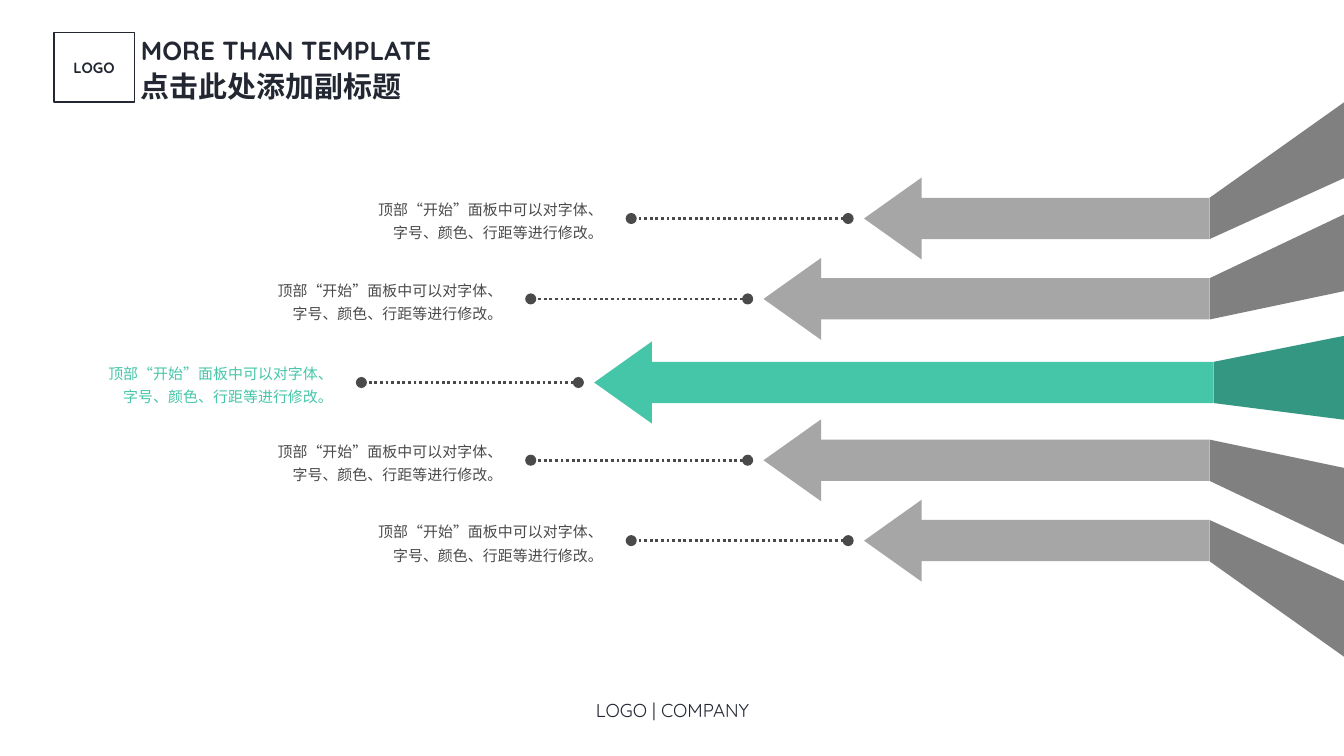
from dataclasses import dataclass

from lxml import etree
from pptx import Presentation
from pptx.dml.color import RGBColor
from pptx.enum.dml import MSO_LINE
from pptx.enum.shapes import MSO_CONNECTOR, MSO_SHAPE
from pptx.enum.text import MSO_ANCHOR, MSO_AUTO_SIZE, PP_ALIGN
from pptx.oxml.ns import qn
from pptx.shapes.autoshape import Shape
from pptx.shapes.shapetree import GroupShapes
from pptx.slide import Slide
from pptx.text.text import TextFrame
from pptx.util import Cm, Pt

RECTANGLE, TRIANGLE = MSO_SHAPE.RECTANGLE, MSO_SHAPE.ISOSCELES_TRIANGLE
LEFT, CENTER, RIGHT = PP_ALIGN.LEFT, PP_ALIGN.CENTER, PP_ALIGN.RIGHT
TOP, MIDDLE = MSO_ANCHOR.TOP, MSO_ANCHOR.MIDDLE
NO_FIT, GROW = MSO_AUTO_SIZE.NONE, MSO_AUTO_SIZE.SHAPE_TO_FIT_TEXT
DOTS, STRAIGHT = MSO_LINE.ROUND_DOT, MSO_CONNECTOR.STRAIGHT


@dataclass(frozen=True)
class Theme:
    ink: str = "222732"
    text: str = "4A4A4A"
    gray: str = "A6A6A6"
    dark_gray: str = "808080"
    green: str = "46C6A9"
    dark_green: str = "349782"
    latin: str = "Quicksand"
    chinese: str = "Noto Sans CJK SC"
    title_size: float = 14
    subtitle_size: float = 15.5
    footer_size: float = 10
    small_size: float = 8


@dataclass(frozen=True)
class Arrow:
    """One arrow; lengths in centimetres, tail_* being its far right edge."""
    axis: float
    tip: float
    shaft_left: float
    bend: float
    tail_x: float
    tail_top: float
    tail_bottom: float
    fill: str
    tail_fill: str
    text_color: str

    def mirrored(self) -> "Arrow":
        return Arrow(MIRROR_SUM - self.axis, self.tip, self.shaft_left, self.bend,
                     self.tail_x, MIRROR_SUM - self.tail_bottom,
                     MIRROR_SUM - self.tail_top, self.fill, self.tail_fill,
                     self.text_color)


THEME = Theme()
MIRROR_SUM = 14.35  # the outer arrows mirror each other about half this height
SHAFT_HEIGHT = 0.78
HEAD_LENGTH, HEAD_WIDTH = 1.09, 1.55
LINE_GAP, LINE_LENGTH = 0.3, 4.1
CAPTION_GAP, CAPTION_WIDTH, CAPTION_HEIGHT = 0.28, 4.98, 1.12
CAPTION = "顶部“开始”面板中可以对字体、字号、颜色、行距等进行修改。"

GRAYS = (THEME.gray, THEME.dark_gray, THEME.text)
OUTER = Arrow(4.13, 16.33, 17.12, 22.86, 25.55, 1.83, 3.3, *GRAYS)
INNER = Arrow(5.65, 14.43, 15.42, 22.86, 25.85, 3.84, 5.41, *GRAYS)
MAIN = Arrow(7.23, 11.23, 12.19, 22.94, 26.15, 6.2, 8.03,
             THEME.green, THEME.dark_green, THEME.green)
ARROWS = (OUTER, INNER, MAIN, INNER.mirrored(), OUTER.mirrored())


def write(frame: TextFrame, text: str, *, size: float, color: str = THEME.ink,
          font: str = THEME.latin, bold: bool = False, align: PP_ALIGN = LEFT,
          spacing: float = 1.0, anchor: MSO_ANCHOR = TOP,
          fit: MSO_AUTO_SIZE = GROW) -> None:
    """Fill the first paragraph, or add one if it already holds text."""
    frame.word_wrap, frame.auto_size, frame.vertical_anchor = True, fit, anchor
    para = frame.add_paragraph() if frame.text else frame.paragraphs[0]
    para.alignment, para.line_spacing = align, spacing
    span = para.add_run()
    span.text = text
    span.font.size, span.font.bold = Pt(size), bold
    span.font.color.rgb = RGBColor.from_string(color)
    span.font.name = font
    east_asian = etree.SubElement(span.font._element, qn("a:ea"))
    east_asian.set("typeface", THEME.chinese)


def paint(shape: Shape, color: str) -> None:
    shape.shadow.inherit = False
    shape.fill.solid()
    shape.fill.fore_color.rgb = RGBColor.from_string(color)
    shape.line.fill.background()


def add_header(page: Slide) -> None:
    title = page.shapes.title
    title.left, title.top, title.width, title.height = Cm(2.41), Cm(0.46), Cm(6.3), Cm(1.63)
    heading = dict(bold=True, spacing=1.1, anchor=MIDDLE, fit=NO_FIT)
    write(title.text_frame, "MORE THAN TEMPLATE", size=THEME.title_size, **heading)
    write(title.text_frame, "点击此处添加副标题", size=THEME.subtitle_size,
          font=THEME.chinese, **heading)

    logo = page.shapes.add_shape(RECTANGLE, Cm(1.02), Cm(0.61), Cm(1.52), Cm(1.32))
    logo.shadow.inherit = False
    logo.fill.background()
    logo.line.color.rgb = RGBColor.from_string(THEME.ink)
    logo.line.width = Pt(0.75)
    write(logo.text_frame, "LOGO", size=THEME.small_size, bold=True,
          align=CENTER, anchor=MIDDLE, fit=NO_FIT)


def add_footer(page: Slide) -> None:
    box = page.shapes.add_textbox(Cm(9.98), Cm(13.16), Cm(5.46), Cm(0.61))
    write(box.text_frame, "LOGO | COMPANY", size=THEME.footer_size,
          align=CENTER, spacing=0.8)


def add_tail(shapes: GroupShapes, arrow: Arrow) -> None:
    top, bottom = arrow.axis - SHAFT_HEIGHT / 2, arrow.axis + SHAFT_HEIGHT / 2
    builder = shapes.build_freeform(Cm(arrow.bend), Cm(top))
    corners = [(arrow.tail_x, arrow.tail_top), (arrow.tail_x, arrow.tail_bottom),
               (arrow.bend, bottom)]
    builder.add_line_segments([(Cm(x), Cm(y)) for x, y in corners], close=True)
    paint(builder.convert_to_shape(), arrow.tail_fill)


def add_arrow(page: Slide, arrow: Arrow) -> None:
    shapes = page.shapes.add_group_shape().shapes
    shaft = shapes.add_shape(RECTANGLE, Cm(arrow.shaft_left),
                             Cm(arrow.axis - SHAFT_HEIGHT / 2),
                             Cm(arrow.bend - arrow.shaft_left), Cm(SHAFT_HEIGHT))
    paint(shaft, arrow.fill)
    head = shapes.add_shape(TRIANGLE, Cm(arrow.tip + (HEAD_LENGTH - HEAD_WIDTH) / 2),
                            Cm(arrow.axis - HEAD_LENGTH / 2),
                            Cm(HEAD_WIDTH), Cm(HEAD_LENGTH))
    head.rotation = 270
    paint(head, arrow.fill)
    add_tail(shapes, arrow)


def add_caption(page: Slide, arrow: Arrow) -> None:
    """Draw the dotted line left of the arrow and the text it leads to."""
    start = arrow.tip - LINE_GAP
    end = start - LINE_LENGTH
    leader = page.shapes.add_connector(STRAIGHT, Cm(start), Cm(arrow.axis),
                                       Cm(end), Cm(arrow.axis))
    leader.line.color.rgb = RGBColor.from_string(THEME.text)
    leader.line.width, leader.line.dash_style = Pt(1.5), DOTS
    outline = leader.line._get_or_add_ln()
    for tag in ("a:headEnd", "a:tailEnd"):
        etree.SubElement(outline, qn(tag)).set("type", "oval")
    etree.SubElement(leader._element.spPr, qn("a:effectLst"))

    box = page.shapes.add_textbox(Cm(end - CAPTION_GAP - CAPTION_WIDTH),
                                  Cm(arrow.axis - CAPTION_HEIGHT / 2),
                                  Cm(CAPTION_WIDTH), Cm(CAPTION_HEIGHT))
    write(box.text_frame, CAPTION, size=THEME.small_size, color=arrow.text_color,
          align=RIGHT, spacing=1.3)


def main() -> None:
    deck = Presentation()
    deck.slide_width, deck.slide_height = Cm(25.4), Cm(14.29)
    page = deck.slides.add_slide(deck.slide_layouts[5])
    add_header(page)
    add_footer(page)
    for arrow in ARROWS:
        add_arrow(page, arrow)
    for arrow in ARROWS:
        add_caption(page, arrow)
    deck.save("out.pptx")


if __name__ == "__main__":
    main()
